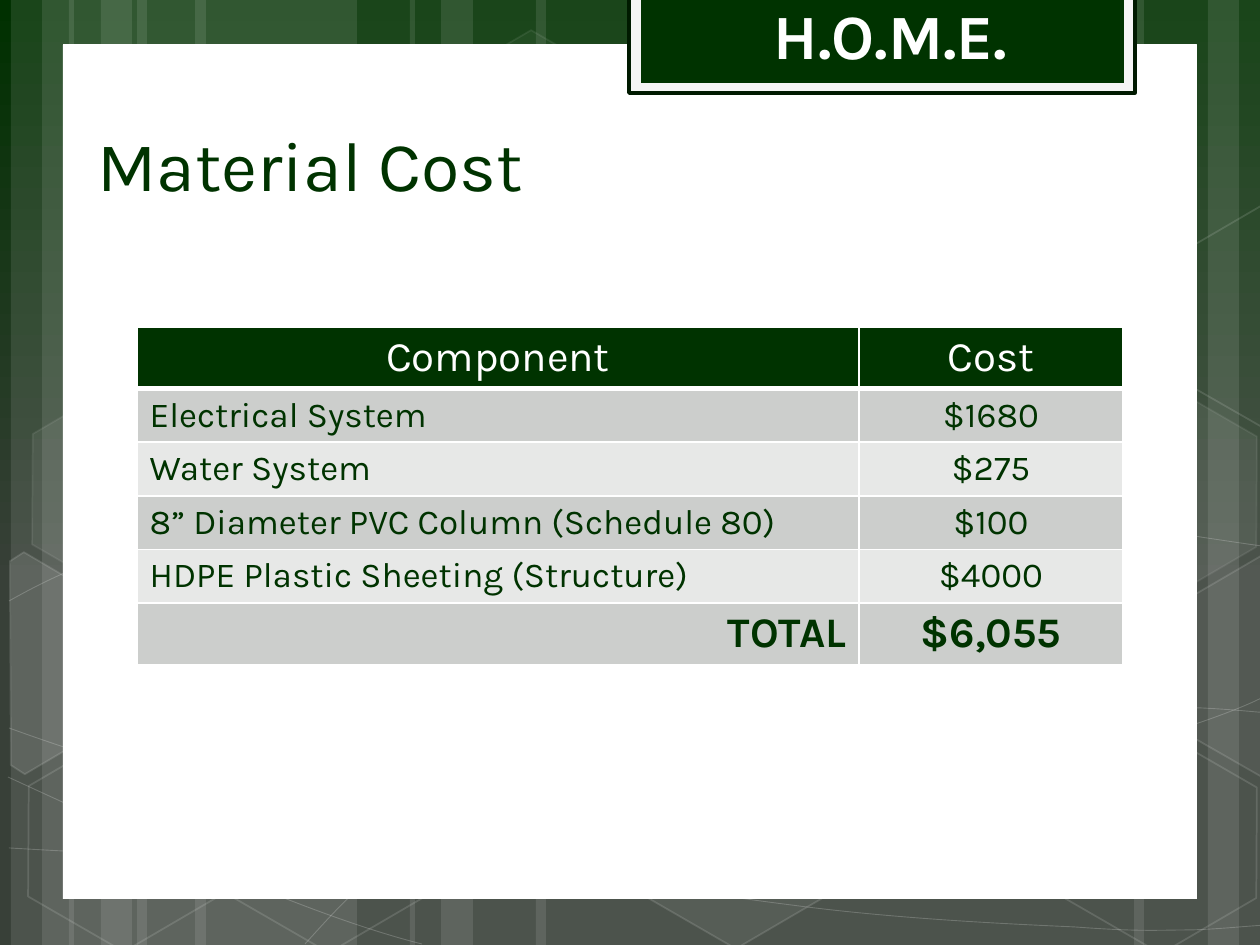
import copy
import math

import pptx
import pptx.dml.color
import pptx.enum.shapes
import pptx.enum.text
import pptx.oxml.ns
import pptx.util
from lxml import etree

EMU_PER_PX = 914400 / 126
WIDTH, HEIGHT = 1260, 945
WHITE, GREEN = "FFFFFF", "003300"
ALIGN = pptx.enum.text.PP_ALIGN
ANCHOR = pptx.enum.text.MSO_ANCHOR
SHAPE = pptx.enum.shapes.MSO_SHAPE
qn = pptx.oxml.ns.qn

HEXAGON_TURN = 30
STRIPES = [(137, 220), (11, 63), (42, 105), (195, 220), (69, 63), (101, 105),
           (924, 220), (1208, 63), (1134, 105), (536, 388), (410, 63), (441, 105)]

# Each curve: a start point, then two handles and an end point per segment.
CURVES = [
    [(9, 848), (77, 852), (145, 856), (239, 854), (334, 853), (451, 851), (577, 838),
     (703, 825), (882, 801), (998, 777), (1113, 753), (1231, 716), (1269, 694)],
    [(9, 601), (45, 581), (82, 562), (152, 543), (224, 524), (326, 496), (437, 488),
     (549, 479), (685, 478), (824, 488), (963, 498), (1193, 537), (1269, 547)],
    [(8, 777), (160, 847), (311, 916), (422, 944)],
    [(9, 728), (48, 742), (88, 756), (161, 776), (234, 795), (344, 827), (450, 848),
     (554, 869), (687, 892), (791, 905), (896, 919), (1008, 924), (1075, 927),
     (1142, 932), (1159, 930), (1191, 930), (1223, 929), (1246, 926), (1269, 925)],
    [(305, 944), (328, 919), (350, 893), (381, 871), (411, 847), (454, 823), (489, 805),
     (524, 788), (546, 780), (591, 767), (638, 754), (722, 737), (766, 728),
     (811, 719), (818, 719), (857, 717), (896, 713), (958, 709), (1000, 708),
     (1044, 707), (1116, 708), (1116, 708), (1144, 708), (1173, 708), (1201, 708),
     (1223, 709), (1245, 711), (1256, 712), (1268, 713), (1264, 712), (1268, 713)],
]

# Left, top, fill opacity, line opacity
HEXAGONS = [(421, 45, 4, 8), (626, 742, 6, 12), (14, 745, 0, 12), (18, 393, 7, 8),
            (219, 746, 0, 12), (949, 571, 10, 12), (1051, 747, 0, 12), (1051, 396, 7, 8)]
LEFT_CUT = [(10, 561), (24, 552), (121, 609), (120, 718), (25, 774), (11, 765)]
RIGHT_CUT = [(1167, 611), (1263, 555), (1271, 562), (1271, 772), (1263, 777), (1167, 722)]
UPPER_RIGHT_CUT = [(x, y - 350) for x, y in RIGHT_CUT]
# Corners, centre of rotation, fill opacity
CUT_HEXAGONS = [(LEFT_CUT, (45, 675), 10), (RIGHT_CUT, (1241, 655), 4),
                (UPPER_RIGHT_CUT, (1241, 305), 0)]

COSTS = [("Electrical System", "$1680"), ("Water System", "$275"),
         ("8” Diameter PVC Column (Schedule 80)", "$100"),
         ("HDPE Plastic Sheeting (Structure)", "$4000")]


def px(length):
    return pptx.util.Emu(round(length * EMU_PER_PX))


def rgb(value):
    return pptx.dml.color.RGBColor.from_string(value)


def paint(fill, color, opacity=100):
    """Fill with a solid colour, or with nothing at zero opacity."""
    if not opacity:
        fill.background()
        return
    fill.solid()
    fill.fore_color.rgb = rgb(color)
    if opacity < 100:
        solid = fill._xPr.find(qn("a:solidFill"))
        etree.SubElement(solid[0], qn("a:alpha"), val=str(opacity * 1000))


def style(shape, fill, opacity=100, line=None, line_width=1, line_opacity=100):
    shape.shadow.inherit = False
    paint(shape.fill, fill, opacity)
    if line:
        shape.line.width = pptx.util.Pt(line_width)
        paint(shape.line.fill, line, line_opacity)
    else:
        shape.line.fill.background()


def add_preset(slide, kind, left, top, width, height, **look):
    shape = slide.shapes.add_shape(kind, px(left), px(top), px(width), px(height))
    style(shape, **look)
    return shape


def add_outline(slide, points, close, **look):
    corners = [(px(x), px(y)) for x, y in points]
    builder = slide.shapes.build_freeform(*corners[0], scale=1.0)
    builder.add_line_segments(corners[1:], close=close)
    outline = builder.convert_to_shape()
    style(outline, WHITE, line=WHITE, **look)
    return outline


def add_curve(slide, knots):
    """Draw the knots as an outline, then join each three of them as a Bezier segment."""
    curve = add_outline(slide, knots, False, opacity=0, line_width=0.5, line_opacity=20)
    route = curve._element.find(".//" + qn("a:path"))
    straight = route.findall(qn("a:lnTo"))
    for i in range(0, len(straight), 3):
        segment = etree.SubElement(route, qn("a:cubicBezTo"))
        for line in straight[i:i + 3]:
            segment.append(line[0])
            route.remove(line)


def turned_back(points, center):
    """Undo the hexagon rotation, so that the shape can carry it."""
    cos, sin = (f(math.radians(HEXAGON_TURN)) for f in (math.cos, math.sin))
    cx, cy = center
    return [(cx + (x - cx) * cos + (y - cy) * sin, cy - (x - cx) * sin + (y - cy) * cos)
            for x, y in points]


def write(frame, text, size, color=GREEN, bold=False, align=ALIGN.LEFT):
    paragraph = frame.paragraphs[0]
    paragraph.alignment = align
    run = paragraph.add_run()
    run.text = text
    run.font.name = "Karla"
    run.font.size = pptx.util.Pt(size)
    run.font.bold = bold
    run.font.color.rgb = rgb(color)


def paint_background(slide):
    fill = slide.background.fill
    fill.gradient()
    fill.gradient_angle = 270
    stop_list = slide.element.find(".//" + qn("a:gsLst"))
    stop_list.append(copy.deepcopy(stop_list[-1]))
    for stop, (position, color) in zip(
            fill.gradient_stops, [(0, "003000"), (0.62, "384038"), (1, "393E39")]):
        stop.position = position
        stop.color.rgb = rgb(color)


def add_decor(slide):
    for left, width in STRIPES:
        add_preset(slide, SHAPE.RECTANGLE, left, 0, width, HEIGHT, fill=WHITE, opacity=10)
    for knots in CURVES:
        add_curve(slide, knots)
    for left, top, opacity, line_opacity in HEXAGONS:
        hexagon = add_preset(slide, SHAPE.HEXAGON, left, top, 220, 192, fill=WHITE,
                             opacity=opacity, line=WHITE, line_opacity=line_opacity)
        hexagon.adjustments[0] = 0.285
        hexagon.adjustments[1] = 1.155
        hexagon.rotation = HEXAGON_TURN
    for points, center, opacity in CUT_HEXAGONS:
        cut = add_outline(slide, turned_back(points, center), True,
                          opacity=opacity, line_opacity=12)
        cut.rotation = HEXAGON_TURN


def add_banner(slide):
    add_preset(slide, SHAPE.RECTANGLE, 629, -3, 506, 96,
               fill="F5F5F5", line="001A00", line_width=2)
    add_preset(slide, SHAPE.RECTANGLE, 641, -3, 483, 86, fill=GREEN)
    label = slide.shapes.add_textbox(px(641), px(-5), px(483), px(78)).text_frame
    label.word_wrap = True
    label.vertical_anchor = ANCHOR.MIDDLE
    write(label, " H.O.M.E.", size=36, color=WHITE, bold=True, align=ALIGN.CENTER)


def place_title(slide):
    title = slide.shapes.title
    slide.shapes._spTree.append(title._element)  # bring in front of the panel
    title.left, title.top, title.width, title.height = px(85), px(115), px(1076), px(95)
    title.text_frame.auto_size = pptx.enum.text.MSO_AUTO_SIZE.NONE
    title.text_frame.vertical_anchor = ANCHOR.TOP
    write(title.text_frame, "Material Cost", size=40)


def set_borders(cell, **widths):
    """Draw white cell borders; widths in points by side, placed before the fill."""
    properties = cell._tc.get_or_add_tcPr()
    for index, side in enumerate("LRTB"):
        border = etree.Element(qn("a:ln" + side), w=str(pptx.util.Pt(widths.get(side, 1))))
        solid = etree.SubElement(border, qn("a:solidFill"))
        etree.SubElement(solid, qn("a:srgbClr"), val=WHITE)
        properties.insert(index, border)


def add_cost_table(slide):
    rows = [("Component", "Cost"), *COSTS, ("TOTAL", "$6,055")]
    last = len(rows) - 1
    table = slide.shapes.add_table(len(rows), 2, px(137), px(327),
                                   px(986), px(52 * len(rows))).table
    table.columns[0].width, table.columns[1].width = px(722), px(264)
    name_align = {0: ALIGN.CENTER, last: ALIGN.RIGHT}
    for r, row in enumerate(rows):
        header_edge = {0: {"B": 3}, 1: {"T": 3}}.get(r, {})
        for c, text in enumerate(row):
            cell = table.cell(r, c)
            paint(cell.fill, GREEN if r == 0 else "CCCECC" if r % 2 else "E7E8E7")
            set_borders(cell, **header_edge)
            write(cell.text_frame, text, size=24 if r in (0, last) else 20,
                  color=GREEN if r else WHITE, bold=r == last,
                  align=ALIGN.CENTER if c else name_align.get(r, ALIGN.LEFT))


def main():
    deck = pptx.Presentation()
    deck.slide_width, deck.slide_height = px(WIDTH), px(HEIGHT)
    slide = deck.slides.add_slide(deck.slide_layouts[5])
    paint_background(slide)
    add_decor(slide)
    add_preset(slide, SHAPE.RECTANGLE, 63, 45, 1134, 854,
               fill=WHITE, line=WHITE, line_width=0.5)
    add_banner(slide)
    place_title(slide)
    add_cost_table(slide)
    deck.save("out.pptx")


if __name__ == "__main__":
    main()
